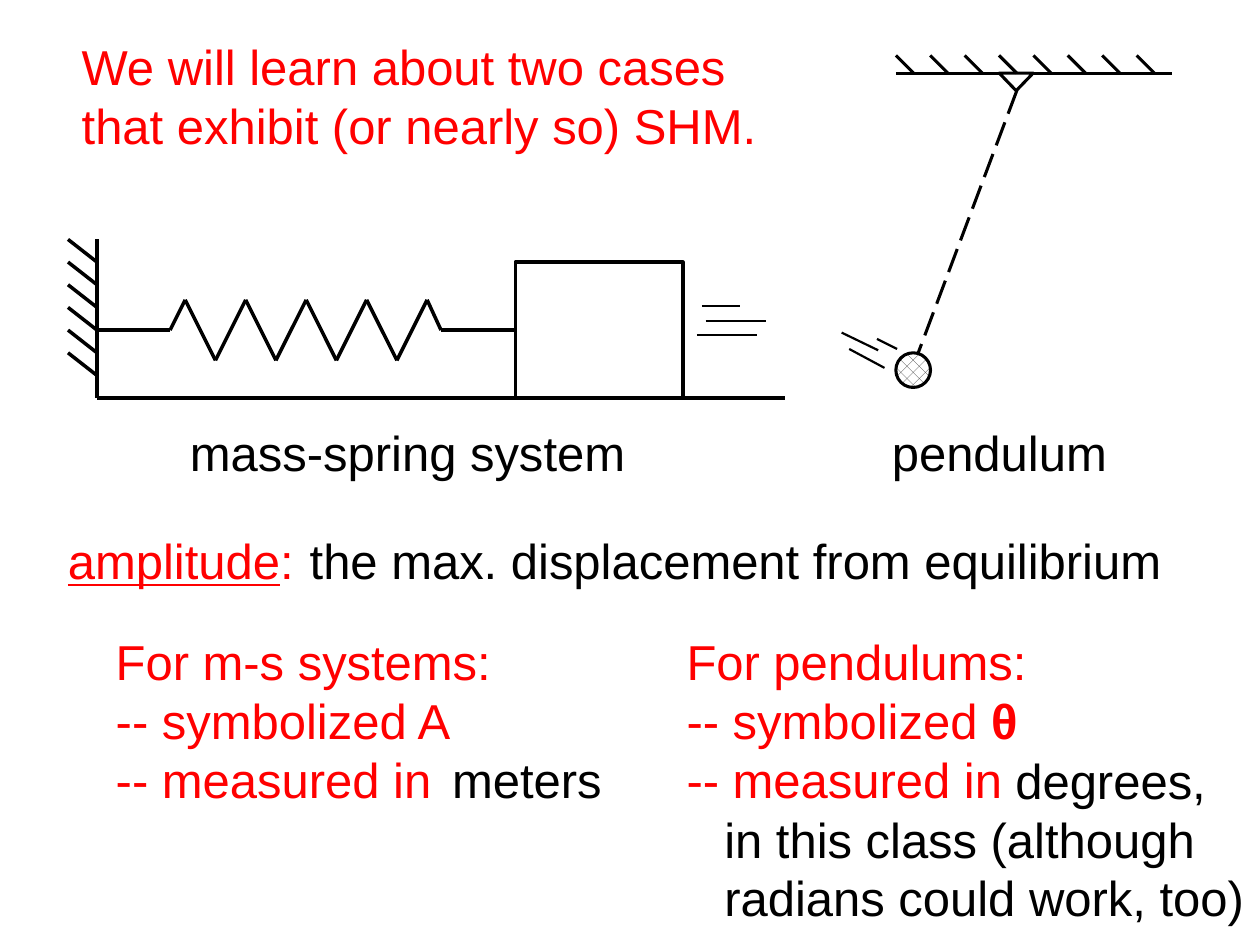
from itertools import pairwise

from lxml.etree import SubElement
from pptx import Presentation
from pptx.dml.color import RGBColor
from pptx.enum.dml import MSO_LINE, MSO_PATTERN
from pptx.enum.shapes import MSO_CONNECTOR, MSO_SHAPE
from pptx.enum.text import MSO_ANCHOR
from pptx.oxml.ns import qn
from pptx.util import Inches, Pt

COLORS = {"ink": "000000", "red": "FF0000", "paper": "FFFFFF", "grain": "333333"}
COLUMNS, ROWS = 100, 75
HEAVY, MEDIUM, THIN = 2, 1.75, 1.25
LEFT_SIDE = 1


def color(name):
    return RGBColor.from_string(COLORS[name])


class Sketch:
    """Draws on one page; every length is in grid columns and rows."""

    font = {"name": "Arial", "size": Pt(28)}

    def __init__(self, deck):
        self.page = deck.slides.add_slide(deck.slide_layouts[6])
        self.column = deck.slide_width / COLUMNS
        self.row = deck.slide_height / ROWS

    def place(self, x, y):
        return round(x * self.column), round(y * self.row)

    def line(self, start, end, weight, dash=None):
        link = self.page.shapes.add_connector(
            MSO_CONNECTOR.STRAIGHT, *self.place(*start), *self.place(*end))
        formats = {"width": Pt(weight), "dash_style": dash}
        for key, value in formats.items():
            setattr(link.line, key, value)
        link.line.color.rgb = color("ink")
        SubElement(link._element.spPr, qn("a:effectLst"))
        return link

    def hatching(self, first, step, slant, count, weight):
        """Draw parallel ticks, each running from its base by the slant."""
        for number in range(count):
            x, y = first[0] + number * step[0], first[1] + number * step[1]
            self.line((x, y), (x + slant[0], y + slant[1]), weight)

    def shape(self, kind, corner, size, weight):
        shape = self.page.shapes.add_shape(
            kind, *self.place(*corner), *self.place(*size))
        shape.shadow.inherit = False
        shape.fill.solid()
        shape.fill.fore_color.rgb = color("paper")
        shape.line.color.rgb = color("ink")
        shape.line.width = Pt(weight)
        return shape

    def text(self, corner, size, paragraphs, shade="ink", indent=0):
        """Each paragraph is a list of (words, font formats) spans."""
        box = self.page.shapes.add_textbox(*self.place(*corner), *self.place(*size))
        frame = box.text_frame
        frame.word_wrap = True
        frame.vertical_anchor = MSO_ANCHOR.MIDDLE
        for number, spans in enumerate(paragraphs):
            para = frame.paragraphs[0] if number == 0 else frame.add_paragraph()
            for words, formats in spans:
                span = para.add_run()
                span.text = words
                for key, value in (self.font | formats).items():
                    setattr(span.font, key, value)
                span.font.color.rgb = color(shade)
        if indent:
            properties = frame.paragraphs[0]._p.get_or_add_pPr()
            properties.set("marL", "0")
            properties.set("indent", str(round(indent * self.column)))


def plain(*lines):
    return [[(line, {})] for line in lines]


def draw_pendulum(sketch):
    ceiling, pivot, bob = 5.8, (80.7, 7.2), (72.5, 29)
    sketch.line((71.1, ceiling), (93, ceiling), MEDIUM)
    support = sketch.shape(MSO_SHAPE.ISOSCELES_TRIANGLE, (79.3, ceiling), (2.7, 1.4), MEDIUM)
    support.rotation = 180
    sketch.line(pivot, bob, MEDIUM, MSO_LINE.LONG_DASH)
    ball = sketch.shape(MSO_SHAPE.OVAL, (71.1, 28), (2.75, 2.75), MEDIUM)
    ball.fill.patterned()
    ball.fill.pattern = MSO_PATTERN.PERCENT_30
    ball.fill.fore_color.rgb = color("grain")
    ball.fill.back_color.rgb = color("paper")
    sketch.hatching((72.5, ceiling), (2.73, 0), (-1.4, -1.4), 8, MEDIUM)
    for start, end in [((69.7, 27.8), (66.8, 26.4)), ((70.2, 29.2), (67.4, 27.7)),
                       ((71.2, 27.7), (69.6, 26.9))]:
        sketch.line(start, end, THIN)


def draw_mass_and_spring(sketch):
    wall, floor, axis, swing = 7.7, 31.6, 26.2, 2.4
    sketch.line((wall, floor), (62.3, floor), HEAVY)
    mass = sketch.shape(MSO_SHAPE.RECTANGLE, (40.9, 20.8), (13.3, 10.8), HEAVY)
    sketch.line((wall, floor), (wall, 19), HEAVY)
    sketch.hatching((wall, 20.8), (0, 1.8), (-2.3, -1.8), 6, HEAVY)

    sketch.line((wall, axis), (13.5, axis), HEAVY)
    turns = [(14.7 + swing * turn, axis + (swing if turn % 2 else -swing))
             for turn in range(9)]
    for start, end in pairwise([(13.5, axis), *turns, (35, axis)]):
        sketch.line(start, end, HEAVY)
    hook = sketch.line((35, axis), (40.9, axis), HEAVY)
    hook.end_connect(mass, LEFT_SIDE)

    for x, y, length in [(55.3, 26.6, 4.8), (56, 25.5, 4.8), (55.7, 24.3, 3)]:
        sketch.line((x, y), (x + length, y), THIN)


def write_notes(sketch):
    sketch.text((5.5, 2.4), (56.2, 10.4), plain(
        "We will learn about two cases", "that exhibit (or nearly so) SHM."), "red")
    sketch.text((14.1, 33), (37, 5.7), plain("mass-spring system"))
    sketch.text((69.8, 33), (19.3, 5.7), plain("pendulum"))
    sketch.text((4.4, 41.6), (20.2, 5.7),
                [[("amplitude", {"underline": True}), (":", {})]], "red")
    sketch.text((23.6, 41.6), (72.7, 5.7),
                plain("the max. displacement from equilibrium"))
    sketch.text((8.2, 49.6), (33.2, 15.1), plain(
        "For m-s systems:", "-- symbolized A", "-- measured in"), "red")
    sketch.text((34.9, 59), (14, 5.7), plain("meters"))
    sketch.text((53.5, 49.6), (31.5, 15.1), [
        [("For pendulums:", {})],
        [("-- symbolized ", {}), ("θ", {"bold": True})],
        [("-- measured in", {})]], "red")
    sketch.text((56.5, 59), (43.8, 15.1), plain(
        "degrees,", "in this class (although", "radians could work, too)"), indent=23.1)


def main():
    deck = Presentation()
    deck.slide_width, deck.slide_height = Inches(10), Inches(7.5)
    sketch = Sketch(deck)
    draw_pendulum(sketch)
    draw_mass_and_spring(sketch)
    write_notes(sketch)
    deck.save("out.pptx")


if __name__ == "__main__":
    main()
